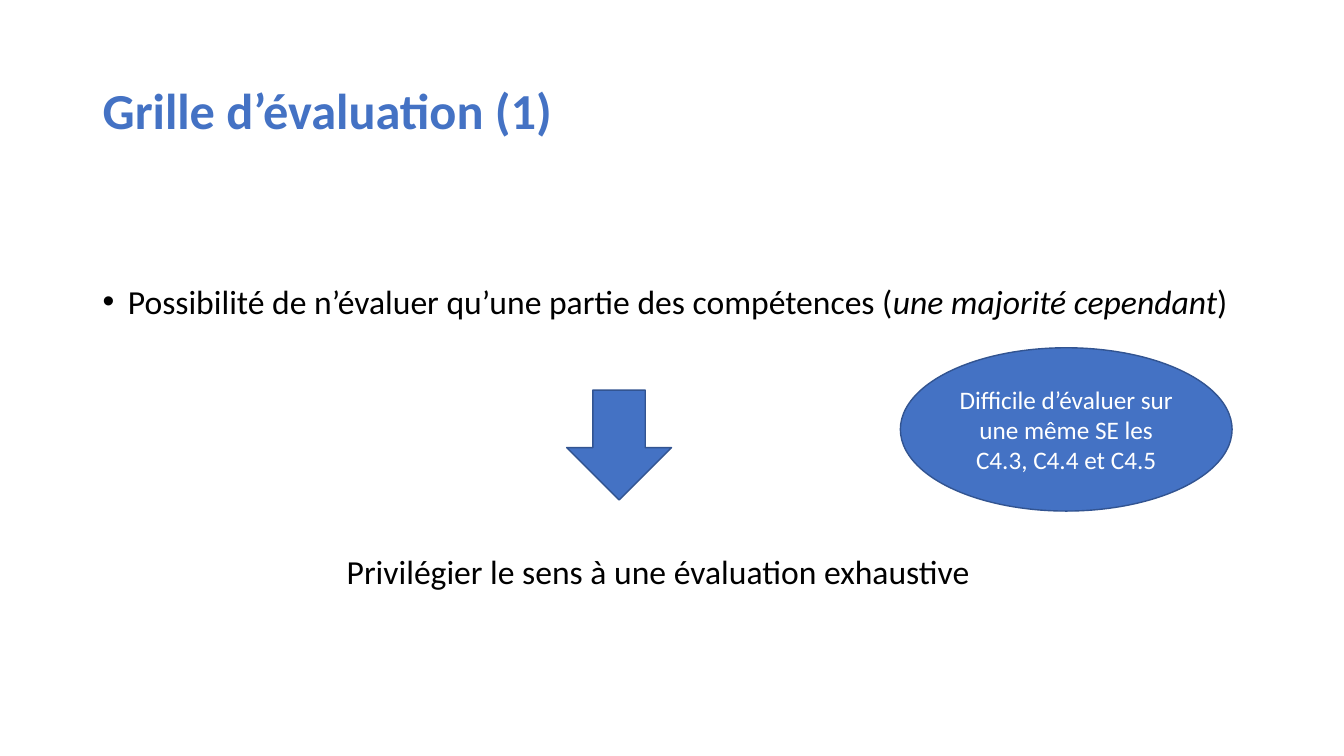
from dataclasses import dataclass

from lxml import etree
from pptx import Presentation
from pptx.dml.color import RGBColor
from pptx.enum.shapes import MSO_SHAPE
from pptx.enum.text import MSO_ANCHOR, PP_ALIGN
from pptx.oxml.ns import qn
from pptx.util import Inches, Pt

BLUE = RGBColor(0x44, 0x72, 0xC4)
DARK_BLUE = RGBColor(0x32, 0x54, 0x91)
BLACK = RGBColor(0, 0, 0)
WHITE = RGBColor(0xFF, 0xFF, 0xFF)
FONT = "Calibri"
ARROW = MSO_SHAPE.DOWN_ARROW
ELLIPSE = MSO_SHAPE.OVAL
TOP, MIDDLE = MSO_ANCHOR.TOP, MSO_ANCHOR.MIDDLE
CENTER = PP_ALIGN.CENTER


@dataclass(frozen=True)
class Box:
    left: float
    top: float
    width: float
    height: float

    def lengths(self):
        return [Inches(v) for v in (self.left, self.top, self.width, self.height)]


@dataclass(frozen=True)
class TextItem:
    box: Box
    runs: tuple[str, ...]
    size: int = 24
    color: RGBColor = BLACK
    bold: bool = False
    italic_run: int = -1
    anchor: MSO_ANCHOR = TOP
    spacing: float = 1.0
    bullet: bool = False


@dataclass(frozen=True)
class ShapeItem:
    box: Box
    kind: MSO_SHAPE
    text: str = ""


TEXTS = [
    TextItem(Box(0.92, 0.4, 11.5, 1.45), ("Grille d’évaluation (1)",),
             size=36, color=BLUE, bold=True, anchor=MIDDLE, spacing=0.9),
    TextItem(Box(0.92, 2.78, 11.5, 3.97),
             ("Possibilité de n’évaluer qu’une partie des compétences (",
              "une majorité cependant", ")"),
             italic_run=1, spacing=0.9, bullet=True),
    TextItem(Box(3.34, 5.42, 6.88, 0.5),
             ("Privilégier le sens à une évaluation exhaustive",)),
]
SHAPES = [
    ShapeItem(Box(5.62, 3.87, 1.04, 1.09), ARROW),
    ShapeItem(Box(8.93, 3.45, 3.29, 1.62), ELLIPSE,
              "Difficile d’évaluer sur une même SE les C4.3, C4.4 et C4.5"),
]


def style_font(font, size: int, color: RGBColor) -> None:
    font.name = FONT
    font.size = Pt(size)
    font.color.rgb = color


def add_bullet(p) -> None:
    pPr = p._p.get_or_add_pPr()
    pPr.set("marL", str(Inches(0.25)))
    pPr.set("indent", str(Inches(-0.25)))
    etree.SubElement(pPr, qn("a:buFont")).set("typeface", "Arial")
    etree.SubElement(pPr, qn("a:buChar")).set("char", "•")


def draw_text(slide, item: TextItem) -> None:
    tf = slide.shapes.add_textbox(*item.box.lengths()).text_frame
    tf.word_wrap = True
    tf.vertical_anchor = item.anchor
    p = tf.paragraphs[0]
    if item.bullet:
        add_bullet(p)
    p.line_spacing = item.spacing
    for i, text in enumerate(item.runs):
        r = p.add_run()
        r.text = text
        style_font(r.font, item.size, item.color)
        r.font.bold = item.bold
        r.font.italic = i == item.italic_run


def draw_shape(slide, item: ShapeItem) -> None:
    sp = slide.shapes.add_shape(item.kind, *item.box.lengths())
    sp.shadow.inherit = False
    sp.fill.solid()
    sp.fill.fore_color.rgb = BLUE
    sp.line.color.rgb = DARK_BLUE
    sp.line.width = Pt(1)
    if item.text:
        tf = sp.text_frame
        tf.text = item.text
        tf.word_wrap = True
        tf.vertical_anchor = MIDDLE
        p = tf.paragraphs[0]
        p.alignment = CENTER
        style_font(p.runs[0].font, 18, WHITE)


def main() -> None:
    prs = Presentation()
    prs.slide_width = Inches(13.33)
    prs.slide_height = Inches(7.5)
    slide = prs.slides.add_slide(prs.slide_layouts[6])
    for text in TEXTS:
        draw_text(slide, text)
    for shape in SHAPES:
        draw_shape(slide, shape)
    prs.save("out.pptx")


if __name__ == "__main__":
    main()
